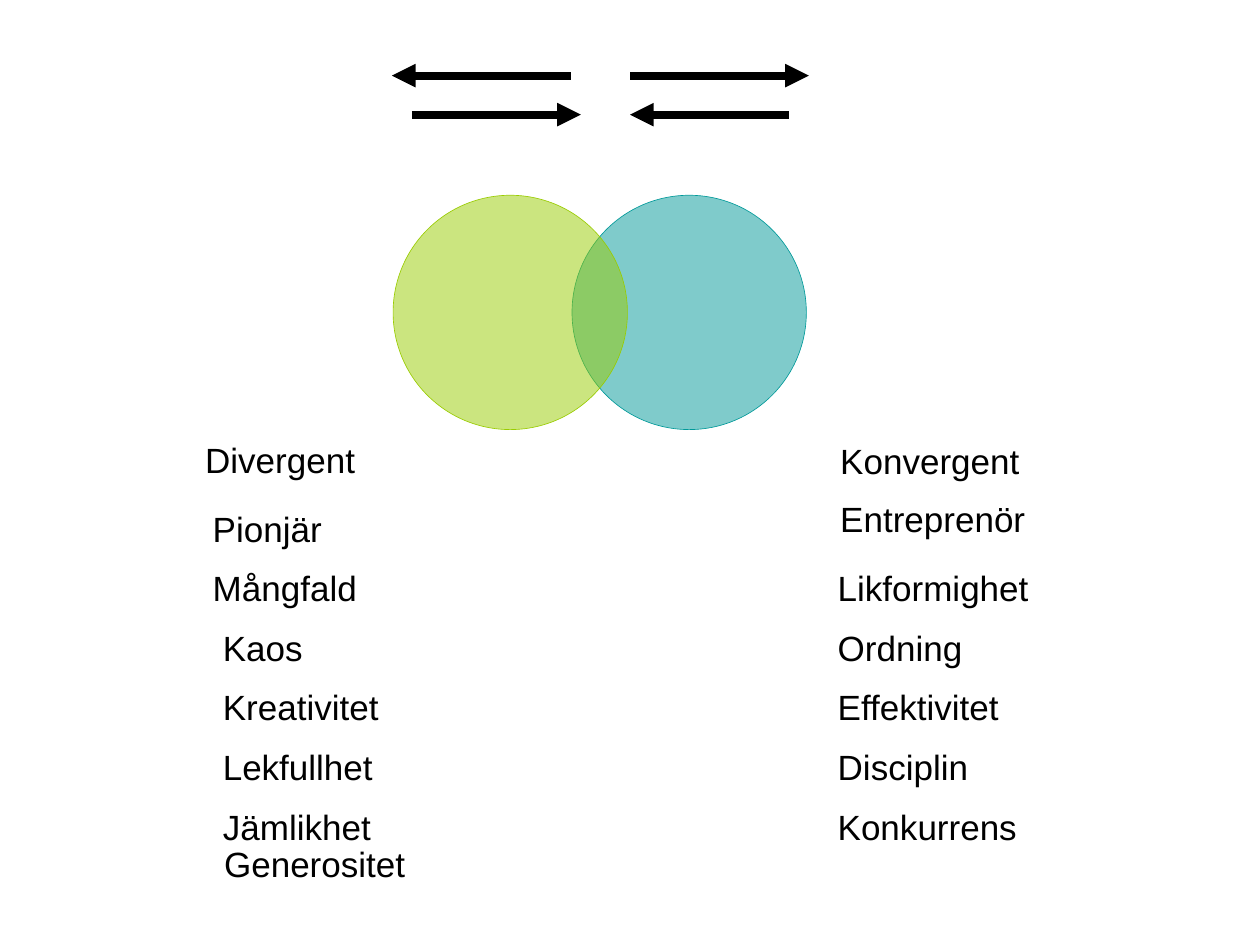
from dataclasses import dataclass

from lxml import etree
from pptx import Presentation
from pptx import util as u
from pptx.dml.color import RGBColor
from pptx.enum import shapes, text
from pptx.oxml.ns import qn

COLORS = {"divergent": "99CC00", "convergent": "009999", "ink": "000000"}
WORD_FORMAT = {"name": "Arial", "size": u.Pt(20)}
FRAME_FORMAT = {"auto_size": text.MSO_AUTO_SIZE.SHAPE_TO_FIT_TEXT,
                "vertical_anchor": text.MSO_ANCHOR.TOP}
DIAMETER = 1.86
CIRCLE_TOP = 1.55
WORD_HEIGHT = 0.43
FIRST_ROW = 4.45
ROW_STEP = 1.89 / 4


@dataclass
class Circle:
    left: float
    color: str


@dataclass
class Arrow:
    start: float
    end: float
    y: float


@dataclass
class Word:
    wording: str
    left: float
    top: float
    width: float
    wrap: bool = False


@dataclass
class Contrast:
    divergent: str
    divergent_left: float
    divergent_width: float
    convergent: str
    convergent_width: float


CIRCLES = [Circle(4.54, "convergent"), Circle(3.12, "divergent")]

ARROWS = [
    Arrow(4.53, 3.11, 0.6),
    Arrow(5, 6.42, 0.6),
    Arrow(3.27, 4.61, 0.91),
    Arrow(6.26, 5, 0.91),
]

HEADINGS = [
    Word("Divergent", 1.53, 3.43, 1.73, True),
    Word("Konvergent", 6.57, 3.44, 1.91, True),
    Word("Pionjär", 1.59, 3.98, 1.07),
    Word("Entreprenör", 6.57, 3.9, 1.72, True),
]

CONTRASTS = [
    Contrast("Mångfald", 1.59, 1.37, "Likformighet", 1.74),
    Contrast("Kaos", 1.67, 0.84, "Ordning", 1.19),
    Contrast("Kreativitet", 1.67, 1.45, "Effektivitet", 1.49),
    Contrast("Lekfullhet", 1.67, 1.4, "Disciplin", 1.25),
    Contrast("Jämlikhet", 1.67, 1.39, "Konkurrens", 1.63),
]

GENEROSITY = Word("Generositet", 1.68, 6.64, 1.68)


def rgb(color: str) -> RGBColor:
    return RGBColor.from_string(COLORS[color])


def apply_format(target, values: dict) -> None:
    for attribute, value in values.items():
        setattr(target, attribute, value)


def draw_circle(venn, circle: Circle) -> None:
    disc = venn.shapes.add_shape(
        shapes.MSO_SHAPE.OVAL, u.Inches(circle.left), u.Inches(CIRCLE_TOP),
        u.Inches(DIAMETER), u.Inches(DIAMETER))
    disc.shadow.inherit = False
    disc.fill.solid()
    disc.fill.fore_color.rgb = rgb(circle.color)
    fill_color = disc.fill._xPr.find(qn("a:solidFill"))[0]
    etree.SubElement(fill_color, qn("a:alpha"), val="50000")
    disc.line.color.rgb = rgb(circle.color)
    disc.line.width = u.Pt(0.37)


def draw_arrow(slide, arrow: Arrow) -> None:
    connector = slide.shapes.add_connector(
        shapes.MSO_CONNECTOR.STRAIGHT, u.Inches(arrow.start), u.Inches(arrow.y),
        u.Inches(arrow.end), u.Inches(arrow.y))
    connector.line.color.rgb = rgb("ink")
    connector.line.width = u.Pt(4.5)
    etree.SubElement(connector.line._get_or_add_ln(), qn("a:tailEnd"), type="triangle")
    etree.SubElement(connector._element.spPr, qn("a:effectLst"))


def draw_word(slide, word: Word) -> None:
    box = slide.shapes.add_textbox(
        u.Inches(word.left), u.Inches(word.top),
        u.Inches(word.width), u.Inches(WORD_HEIGHT))
    apply_format(box.text_frame, FRAME_FORMAT | {"word_wrap": word.wrap})
    run = box.text_frame.paragraphs[0].add_run()
    run.text = word.wording
    apply_format(run.font, WORD_FORMAT)
    run.font.color.rgb = rgb("ink")


def draw_contrast(slide, row: int, contrast: Contrast) -> None:
    top = FIRST_ROW + row * ROW_STEP
    draw_word(slide, Word(contrast.divergent, contrast.divergent_left, top,
                          contrast.divergent_width))
    draw_word(slide, Word(contrast.convergent, 6.55, top, contrast.convergent_width))


def main() -> None:
    deck = Presentation()
    deck.slide_width, deck.slide_height = u.Inches(10), u.Inches(7.5)
    slide = deck.slides.add_slide(deck.slide_layouts[6])
    venn = slide.shapes.add_group_shape()
    for circle in CIRCLES:
        draw_circle(venn, circle)
    for arrow in ARROWS:
        draw_arrow(slide, arrow)
    for heading in HEADINGS:
        draw_word(slide, heading)
    for row, contrast in enumerate(CONTRASTS):
        draw_contrast(slide, row, contrast)
    draw_word(slide, GENEROSITY)
    deck.save("out.pptx")


if __name__ == "__main__":
    main()
